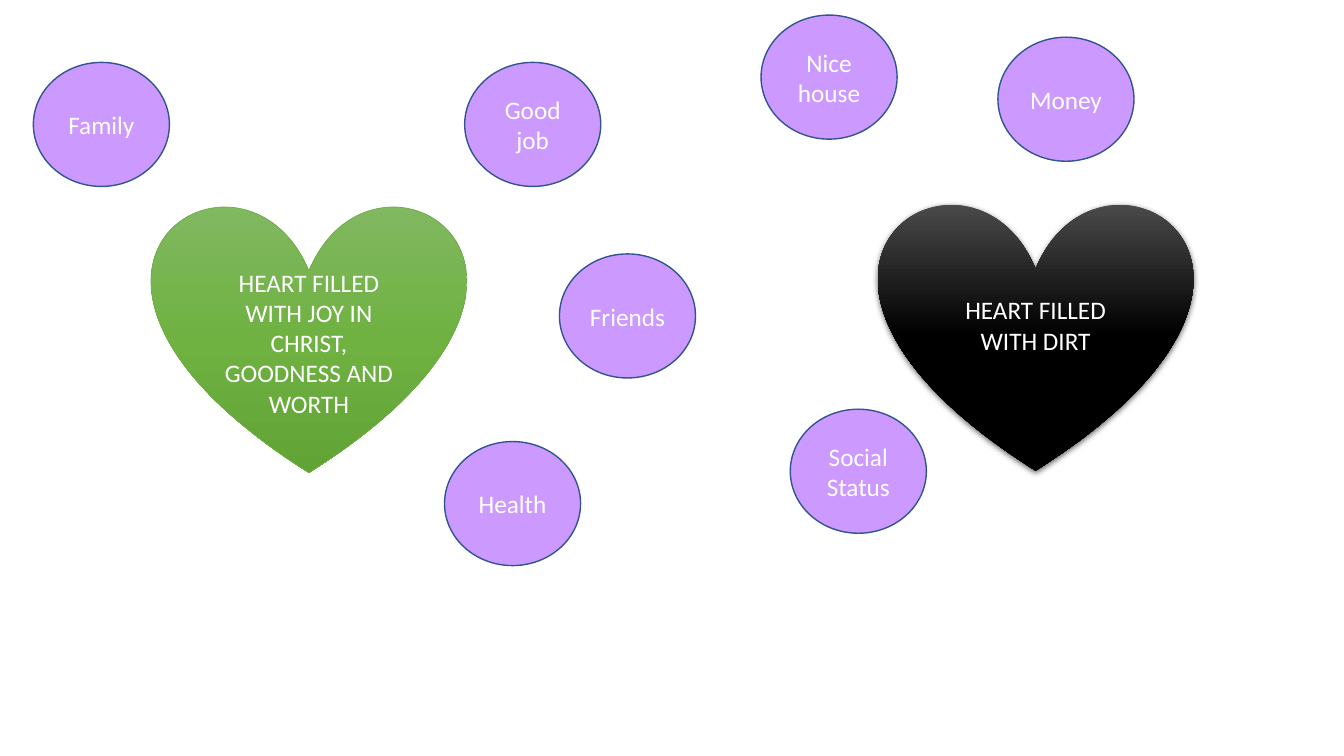
from copy import deepcopy
from dataclasses import dataclass

from lxml import etree
from pptx import Presentation
from pptx.dml.color import RGBColor
from pptx.enum import shapes, text
from pptx.oxml import ns
from pptx.util import Pt

COLORS = {
    "white": "FFFFFF",
    "lilac": "CC99FF",
    "navy": "325491",
    "green_line": "70AD47",
    "green_top": "81B861",
    "green_mid": "6FB242",
    "green_end": "62A336",
    "charcoal": "4B4B4B",
    "black": "000000",
}
HEART_SIZE = (223.9, 192.2)
CIRCLE_SIZE = (97.2, 88.6)


@dataclass
class Heart:
    label: str
    left: float
    top: float
    stops: tuple[str, str, str]
    line: str | None = None
    shadow: bool = False
    top_inset: float = 3.6


@dataclass
class Circle:
    label: str
    left: float
    top: float


HEARTS = [
    Heart("HEART FILLED WITH JOY IN CHRIST, GOODNESS AND WORTH", 108.7, 145.5,
          ("green_top", "green_mid", "green_end"), line="green_line", top_inset=25.6),
    Heart("HEART FILLED WITH DIRT", 627.8, 144,
          ("charcoal", "black", "black"), shadow=True),
]
CIRCLES = [
    Circle("Good job", 331.9, 44.6),
    Circle("Friends", 399.6, 181.4),
    Circle("Nice house", 543.6, 10.8),
    Circle("Social Status", 564.5, 292.3),
    Circle("Health", 317.5, 315.4),
    Circle("Family", 23.8, 44.6),
    Circle("Money", 712.8, 26.6),
]


def rgb(name: str) -> RGBColor:
    return RGBColor.from_string(COLORS[name])


def add_labelled_shape(slide, kind, item: Heart | Circle, size: tuple[float, float]):
    sp = slide.shapes.add_shape(kind, Pt(item.left), Pt(item.top), *map(Pt, size))
    sp.shadow.inherit = False
    tf = sp.text_frame
    tf.word_wrap = True
    tf.vertical_anchor = text.MSO_ANCHOR.MIDDLE
    p = tf.paragraphs[0]
    p.alignment = text.PP_ALIGN.CENTER
    r = p.add_run()
    r.text = item.label
    r.font.name = "Calibri"
    r.font.size = Pt(18)
    r.font.color.rgb = rgb("white")
    return sp


def set_line(sp, color: str | None, width: float) -> None:
    if color is None:
        sp.line.fill.background()
    else:
        sp.line.color.rgb = rgb(color)
        sp.line.width = Pt(width)


def fill_downwards(sp, stops: tuple[str, str, str]) -> None:
    """Fill with a three-stop gradient running from top to bottom."""
    sp.fill.gradient()
    sp.fill.gradient_angle = 270
    stop_list = sp._element.spPr.find(".//" + ns.qn("a:gsLst"))
    stop_list.insert(1, deepcopy(stop_list[0]))
    for stop, color, position in zip(sp.fill.gradient_stops, stops, (0, 0.5, 1)):
        stop.color.rgb = rgb(color)
        stop.position = position


def add_drop_shadow(sp) -> None:
    effects = sp._element.spPr.find(ns.qn("a:effectLst"))
    shadow = etree.SubElement(effects, ns.qn("a:outerShdw"), blurRad=str(Pt(4.5)),
                              dist=str(Pt(1.5)), dir="5400000", algn="ctr", rotWithShape="0")
    color = etree.SubElement(shadow, ns.qn("a:srgbClr"), val=COLORS["black"])
    etree.SubElement(color, ns.qn("a:alpha"), val="63000")


def add_heart(slide, heart: Heart) -> None:
    sp = add_labelled_shape(slide, shapes.MSO_SHAPE.HEART, heart, HEART_SIZE)
    fill_downwards(sp, heart.stops)
    set_line(sp, heart.line, 0.5)
    sp.text_frame.margin_top = Pt(heart.top_inset)
    if heart.shadow:
        add_drop_shadow(sp)


def add_circle(slide, circle: Circle) -> None:
    sp = add_labelled_shape(slide, shapes.MSO_SHAPE.OVAL, circle, CIRCLE_SIZE)
    sp.fill.solid()
    sp.fill.fore_color.rgb = rgb("lilac")
    set_line(sp, "navy", 1)


def main() -> None:
    prs = Presentation()
    prs.slide_width, prs.slide_height = Pt(960), Pt(540)
    slide = prs.slides.add_slide(prs.slide_layouts[6])
    for heart in HEARTS:
        add_heart(slide, heart)
    for circle in CIRCLES:
        add_circle(slide, circle)
    prs.save("out.pptx")


if __name__ == "__main__":
    main()
